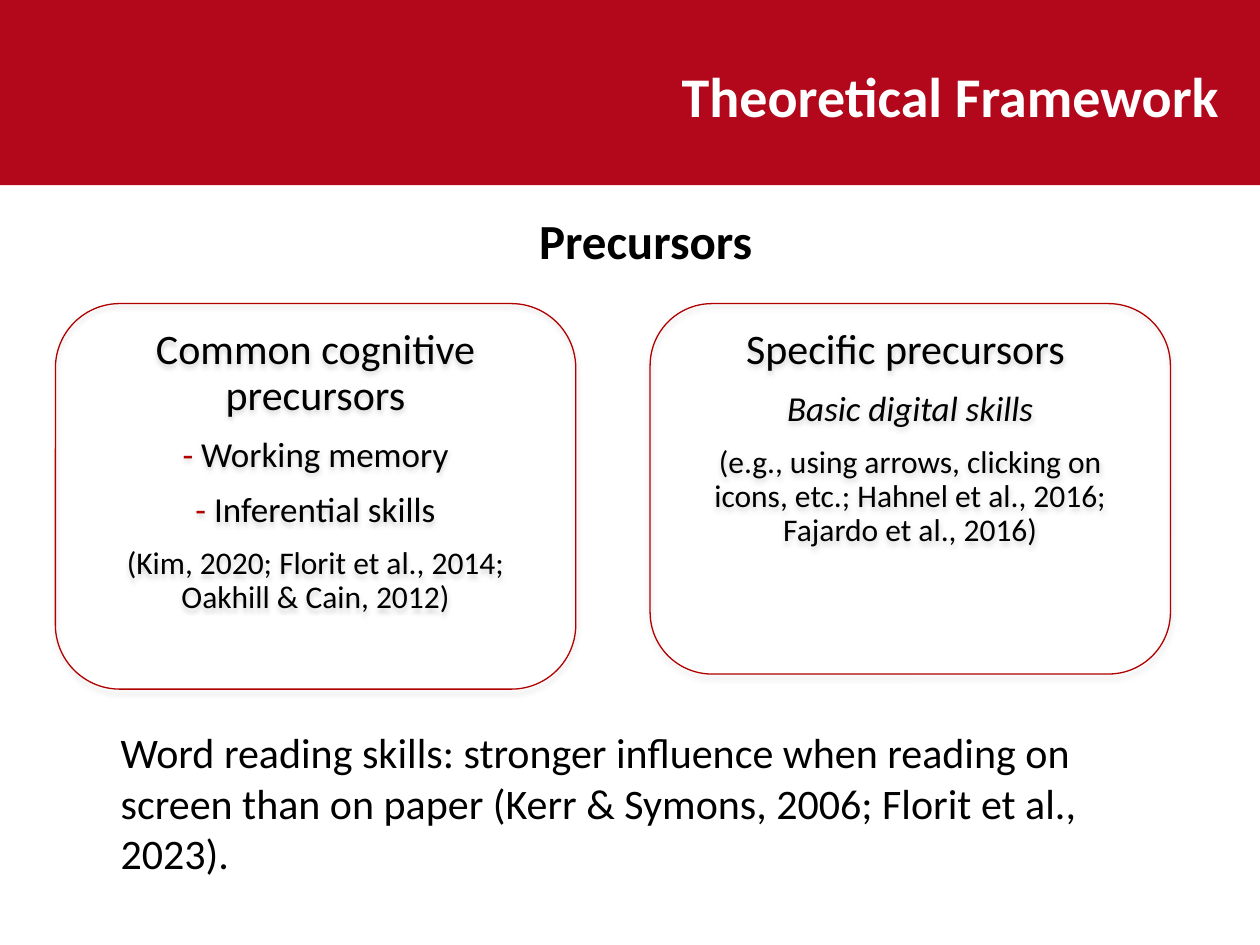
from dataclasses import dataclass

from lxml import etree
from pptx import Presentation
from pptx.dml.color import RGBColor
from pptx.enum.shapes import MSO_SHAPE
from pptx.enum.text import MSO_ANCHOR, MSO_AUTO_SIZE, PP_ALIGN
from pptx.oxml.ns import qn
from pptx.util import Inches, Pt

RECT = MSO_SHAPE.RECTANGLE
ROUNDED = MSO_SHAPE.ROUNDED_RECTANGLE
TOP = MSO_ANCHOR.TOP
LEFT, CENTER = PP_ALIGN.LEFT, PP_ALIGN.CENTER
NO_AUTOFIT = MSO_AUTO_SIZE.NONE

BANNER_RED = RGBColor(0xB3, 0x07, 0x1B)
ACCENT_RED = RGBColor(0xB0, 0x00, 0x00)
SHADOW_GRAY = RGBColor(0x80, 0x80, 0x80)
BLACK = RGBColor(0x00, 0x00, 0x00)
WHITE = RGBColor(0xFF, 0xFF, 0xFF)
FONT = "Calibri"


@dataclass
class Line:
    text: str
    size: int
    dash: bool = False
    italic: bool = False


@dataclass
class Card:
    left: float
    height: float
    lines: list[Line]


CARDS = [
    Card(0.44, 3.06, [
        Line("Common cognitive precursors", 24),
        Line("Working memory", 20, dash=True),
        Line("Inferential skills", 20, dash=True),
        Line("(Kim, 2020; Florit et al., 2014; Oakhill & Cain, 2012)", 18),
    ]),
    Card(5.16, 2.94, [
        Line("Specific precursors ", 24),
        Line("Basic digital skills", 20, italic=True),
        Line("(e.g., using arrows, clicking on icons, etc.; "
             "Hahnel et al., 2016; Fajardo et al., 2016)", 18),
    ]),
]


def style_font(font, size: int, color: RGBColor, bold: bool = False) -> None:
    font.name = FONT
    font.size = Pt(size)
    font.bold = bold
    font.color.rgb = color


def add_shadow(sp) -> None:
    effects = etree.SubElement(sp._element.spPr, qn("a:effectLst"))
    shadow = etree.SubElement(
        effects, qn("a:outerShdw"), blurRad=str(Pt(3.1)), dist=str(Pt(1.8)),
        dir=str(90 * 60000), rotWithShape="0")
    color = etree.SubElement(shadow, qn("a:srgbClr"), val=str(SHADOW_GRAY))
    etree.SubElement(color, qn("a:alpha"), val="35000")


def add_banner(slide) -> None:
    sp = slide.shapes.add_shape(RECT, 0, Inches(-0.03), Inches(10), Inches(1.5))
    sp.shadow.inherit = False
    sp.fill.solid()
    sp.fill.fore_color.rgb = BANNER_RED
    sp.line.fill.background()
    slide.shapes._spTree.insert(2, sp._element)


def add_title(slide, text: str) -> None:
    sp = slide.shapes.title
    sp.left, sp.top = Inches(5.31), Inches(0.44)
    sp.width, sp.height = Inches(4.51), Inches(0.64)
    tf = sp.text_frame
    tf.text = text
    tf.word_wrap = False
    tf.auto_size = NO_AUTOFIT
    tf.vertical_anchor = TOP
    p = tf.paragraphs[0]
    p.alignment = LEFT
    style_font(p.font, 32, WHITE, bold=True)


def add_card(slide, card: Card) -> None:
    sp = slide.shapes.add_shape(
        ROUNDED, Inches(card.left), Inches(2.41), Inches(4.13), Inches(card.height))
    sp.adjustments[0] = 0.167
    sp.fill.background()
    sp.line.color.rgb = ACCENT_RED
    sp.line.width = Pt(0.75)
    add_shadow(sp)
    tf = sp.text_frame
    tf.word_wrap = True
    tf.vertical_anchor = TOP
    tf.margin_left = tf.margin_right = Inches(0.25)
    for i, line in enumerate(card.lines):
        p = tf.add_paragraph() if i else tf.paragraphs[0]
        p.alignment = CENTER
        p.line_spacing = 0.9
        p.space_before = Pt(10 if i else 0)
        style_font(p.font, line.size, BLACK)
        p.font.italic = line.italic
        if line.dash:
            r = p.add_run()
            r.text = "- "
            r.font.color.rgb = ACCENT_RED
        r = p.add_run()
        r.text = line.text
        r.font.color.rgb = BLACK


def add_text(slide, text: str, left: float, top: float, width: float,
             height: float, size: int, bold: bool = False, wrap: bool = True) -> None:
    sp = slide.shapes.add_textbox(
        Inches(left), Inches(top), Inches(width), Inches(height))
    tf = sp.text_frame
    tf.text = text
    tf.word_wrap = wrap
    style_font(tf.paragraphs[0].font, size, BLACK, bold)


def main() -> None:
    prs = Presentation()
    prs.slide_width, prs.slide_height = Inches(10), Inches(7.5)
    slide = prs.slides.add_slide(prs.slide_layouts[5])
    add_banner(slide)
    add_title(slide, "Theoretical Framework")
    for card in CARDS:
        add_card(slide, card)
    add_text(slide, "Precursors", 4.18, 1.62, 1.91, 0.57, 28, bold=True, wrap=False)
    add_text(slide, "Word reading skills: stronger influence when reading on screen "
             "than on paper (Kerr & Symons, 2006; Florit et al., 2023).",
             0.86, 5.72, 8.63, 1.31, 24)
    prs.save("out.pptx")


if __name__ == "__main__":
    main()
